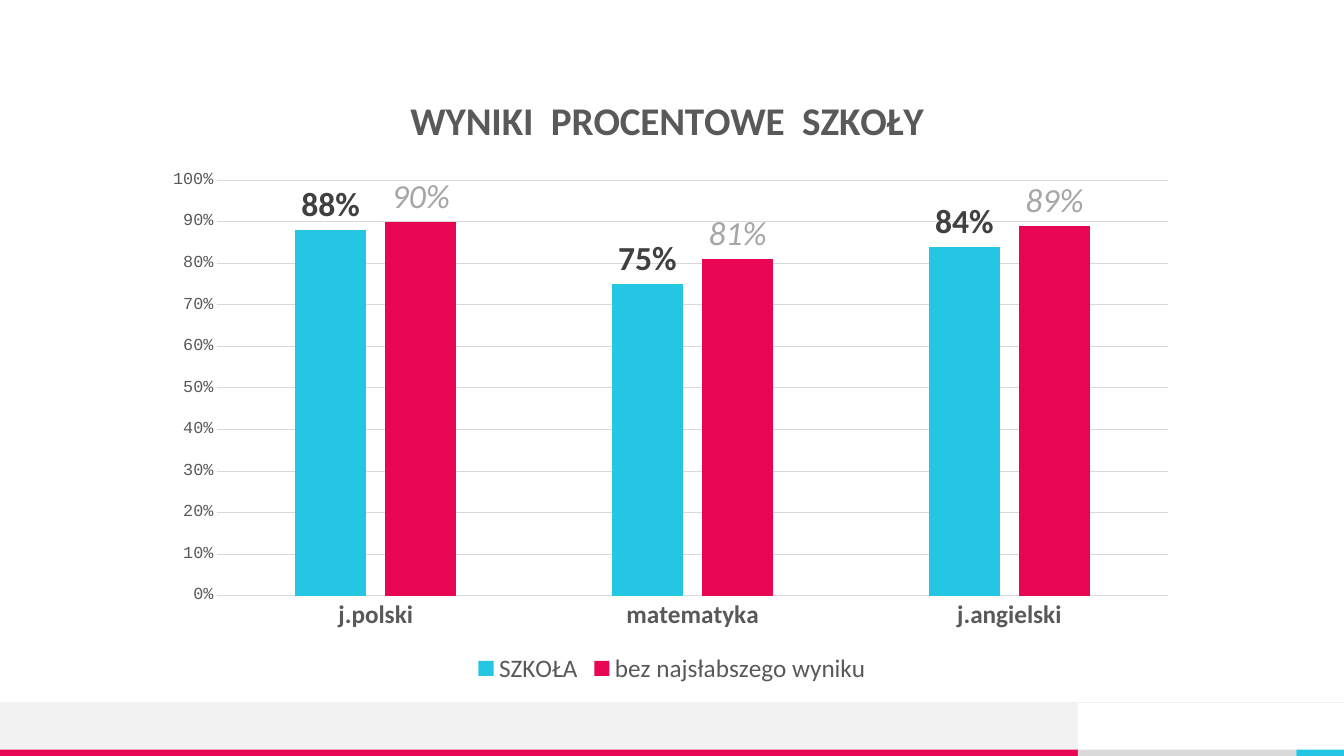
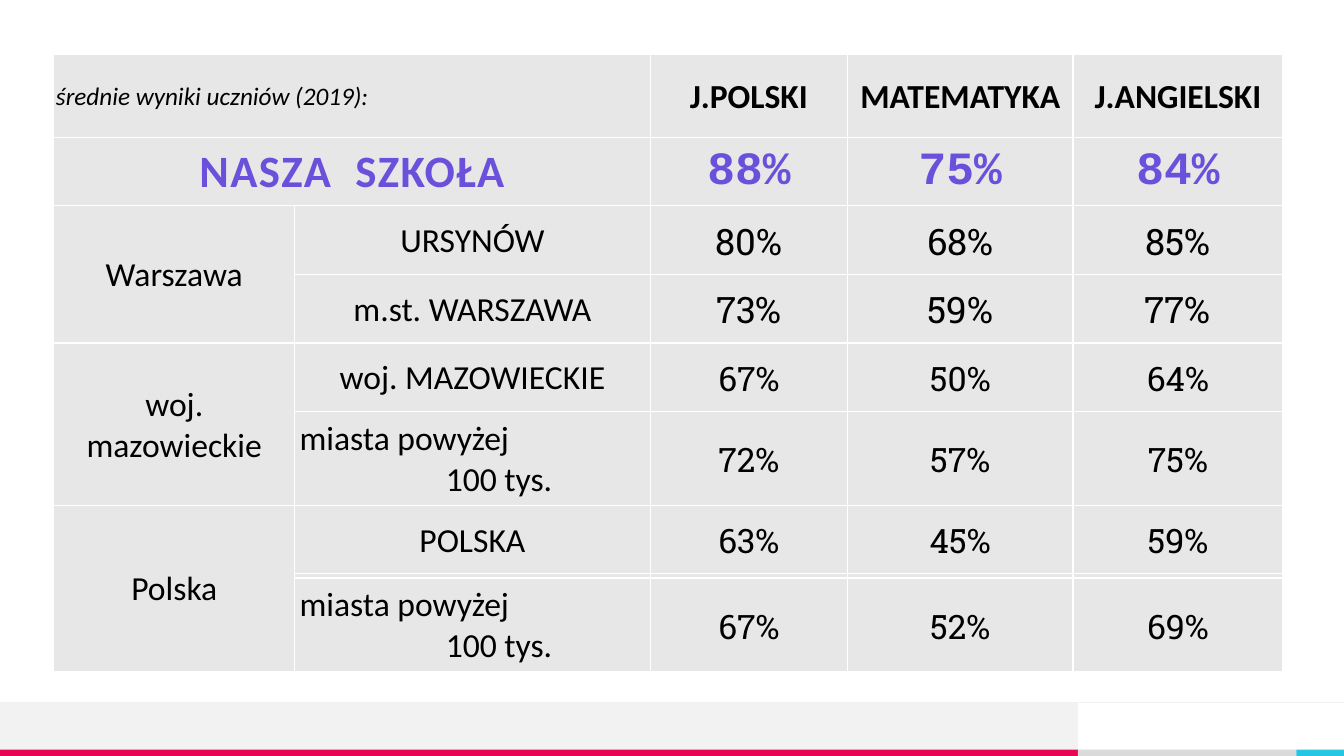
from lxml import etree
from pptx import Presentation
from pptx.chart.data import CategoryChartData
from pptx.dml.color import RGBColor
from pptx.enum.chart import XL_CHART_TYPE, XL_LABEL_POSITION, XL_LEGEND_POSITION, XL_TICK_MARK
from pptx.enum.shapes import MSO_CONNECTOR, MSO_SHAPE
from pptx.enum.text import MSO_ANCHOR, PP_ALIGN
from pptx.oxml import parse_xml
from pptx.oxml.ns import nsdecls, qn
from pptx.util import Pt

WIDTH, HEIGHT = 960, 540
BAND_TOP, STRIPE_TOP = 502, 535.5
STRIPE_ENDS = [0, 770, 926, WIDTH]

CYAN, CRIMSON, VIOLET = "25C6E3", "E80554", "6A50DB"
BLACK, WHITE = "000000", "FFFFFF"
DARK, GREY, PALE_TEXT = "404040", "595959", "A6A6A6"
GRID, STRIPE, BAND, CELL = "D9D9D9", "DADADA", "F2F2F2", "E7E7E7"
SANS, MONO, SLAB = "Calibri", "Courier New", "Roboto Slab"

SUBJECTS = ["j.polski", "matematyka", "j.angielski"]
CITIES = "miasta powyżej\n100 tys."
COLUMN_WIDTHS = [172, 254, 141, 161, 150]
ROW_HEIGHTS = [59, 49, 49, 49, 49, 67, 49, 3, 67]
SPACER_ROW = 7
MERGES = [((0, 0), (0, 1)), ((1, 0), (1, 1)), ((2, 0), (3, 0)), ((4, 0), (5, 0)), ((6, 0), (8, 0))]
ROWS = [
    ["średnie wyniki uczniów (2019):", "", *[subject.upper() for subject in SUBJECTS]],
    ["NASZA  SZKOŁA", "", "88%", "75%", "84%"],
    ["Warszawa", "URSYNÓW", "80%", "68%", "85%"],
    ["", "m.st. WARSZAWA", "73%", "59%", "77%"],
    ["woj. mazowieckie", "woj. MAZOWIECKIE", "67%", "50%", "64%"],
    ["", CITIES, "72%", "57%", "75%"],
    ["Polska", "POLSKA", "63%", "45%", "59%"],
    [""] * 5,
    ["", CITIES, "67%", "52%", "69%"],
]


def color(value):
    return RGBColor.from_string(value)


def style_font(font, size, fill, name=SANS, bold=False, italic=False):
    font.size, font.name, font.bold, font.italic = Pt(size), name, bold, italic
    font.color.rgb = color(fill)


def style_runs(paragraph, *style, spacing=0, **options):
    for run in paragraph.runs:
        style_font(run.font, *style, **options)
        if spacing:
            run.font._element.set("spc", str(round(spacing * 100)))


def add_bar(slide, left, top, width, height, fill):
    bar = slide.shapes.add_shape(MSO_SHAPE.RECTANGLE, Pt(left), Pt(top), Pt(width), Pt(height))
    bar.shadow.inherit = False
    bar.fill.solid()
    bar.fill.fore_color.rgb = color(fill)
    bar.line.fill.background()
    return bar


def add_rule(slide, top):
    rule = slide.shapes.add_connector(MSO_CONNECTOR.STRAIGHT, 0, Pt(top), Pt(WIDTH), Pt(top))
    rule.line.color.rgb = color(BAND)
    rule.line.width = Pt(0.5)
    etree.SubElement(rule.element.spPr, qn("a:effectLst"))
    return rule


def add_footer(slide):
    """Draw the footer and move it to the layout, where all slides share it."""
    parts = [add_bar(slide, 0, BAND_TOP, STRIPE_ENDS[1], STRIPE_TOP - BAND_TOP, BAND)]
    for left, right, fill in zip(STRIPE_ENDS, STRIPE_ENDS[1:], [CRIMSON, STRIPE, CYAN]):
        parts.append(add_bar(slide, left, STRIPE_TOP, right - left, HEIGHT - STRIPE_TOP, fill))
    parts.append(add_rule(slide, BAND_TOP))
    for part in parts:
        slide.slide_layout.shapes.element.append(part.element)


def place(chart_part, left, top, width=None, height=None):
    """Set a chart part's position as fractions of the chart."""
    target = "<c:layoutTarget val='inner'/>" if width else ""
    modes = "<c:xMode val='edge'/><c:yMode val='edge'/>"
    values = "".join(
        f"<c:{key} val='{value}'/>"
        for key, value in zip("xywh", [left, top, width, height]) if value)
    layout = parse_xml(
        f"<c:layout {nsdecls('c')}><c:manualLayout>{target}{modes}{values}"
        "</c:manualLayout></c:layout>")
    for old in chart_part.findall(qn("c:layout")):
        chart_part.remove(old)
    text = chart_part.find(qn("c:tx"))
    chart_part.insert(0 if text is None else 1, layout)


def style_axes(chart):
    categories, values = chart.category_axis, chart.value_axis
    for axis in (categories, values):
        axis.major_tick_mark = axis.minor_tick_mark = XL_TICK_MARK.NONE
    style_font(categories.tick_labels.font, 18, GREY, bold=True)
    style_font(values.tick_labels.font, 12, GREY, MONO)
    values.minimum_scale, values.maximum_scale, values.major_unit = 0, 1, 0.1
    values.tick_labels.number_format = "0%"
    values.tick_labels.number_format_is_linked = False
    values.format.line.fill.background()
    for line in (categories.format.line, values.major_gridlines.format.line):
        line.color.rgb = color(GRID)
        line.width = Pt(0.75)


def style_series(series, fill, label_color, **label_options):
    series.format.fill.solid()
    series.format.fill.fore_color.rgb = color(fill)
    labels = series.data_labels
    labels.show_value = True
    labels.number_format, labels.number_format_is_linked = "0%", False
    labels.position = XL_LABEL_POSITION.OUTSIDE_END
    style_font(labels.font, 24, label_color, **label_options)


def add_results_chart(slide):
    data = CategoryChartData(number_format="0%")
    data.categories = SUBJECTS
    data.add_series("SZKOŁA", [0.88, 0.75, 0.84])
    data.add_series("bez najsłabszego wyniku", [0.9, 0.81, 0.89])
    chart = slide.shapes.add_chart(
        XL_CHART_TYPE.COLUMN_CLUSTERED, Pt(111), Pt(49), Pt(738), Pt(443), data).chart
    style_font(chart.font, 10, BLACK)

    title = chart.chart_title
    title.text_frame.text = "WYNIKI  PROCENTOWE  SZKOŁY"
    style_runs(title.text_frame.paragraphs[0], 28, GREY, bold=True)
    title.include_in_layout = False
    place(title._element, 0.24, 0.03)

    chart.has_legend = True
    chart.legend.position = XL_LEGEND_POSITION.BOTTOM
    chart.legend.include_in_layout = False
    style_font(chart.legend.font, 18, GREY)

    plot = chart.plots[0]
    plot.gap_width, plot.overlap, plot.vary_by_categories = 219, -27, False
    place(chart._chartSpace.chart.plotArea, 0.06, 0.18, 0.92, 0.67)
    style_axes(chart)
    school, without_weakest = plot.series
    style_series(school, CYAN, DARK, bold=True)
    style_series(without_weakest, CRIMSON, PALE_TEXT, italic=True)


def style_cell(cell):
    cell.fill.solid()
    cell.fill.fore_color.rgb = color(CELL)
    cell.vertical_anchor = MSO_ANCHOR.MIDDLE
    cell.margin_left = cell.margin_right = cell.margin_top = Pt(1.5)
    cell.margin_bottom = 0
    properties = cell._tc.get_or_add_tcPr()
    for index, side in enumerate("LRTB"):
        properties.insert(index, parse_xml(
            f"<a:ln{side} {nsdecls('a')} w='{Pt(1)}'><a:solidFill>"
            f"<a:srgbClr val='{WHITE}'/></a:solidFill></a:ln{side}>"))


def shrink_empty_cell(cell):
    cell.margin_top = 0
    end = etree.SubElement(cell.text_frame.paragraphs[0]._p, qn("a:endParaRPr"))
    end.set("sz", "100")


def text_style(row, column):
    """Return the font settings for a table position."""
    is_value = column >= 2
    if row == 0:
        return dict(size=24 if is_value else 18, fill=BLACK, bold=is_value, italic=not is_value)
    if row == 1:
        if is_value:
            return dict(size=33, fill=VIOLET, name=MONO, bold=True)
        return dict(size=32, fill=VIOLET, bold=True, spacing=1)
    size = 26 if is_value and row < 4 else 24
    return dict(size=size, fill=BLACK, name=SLAB if is_value else SANS)


def fill_cell(cell, text, row, column):
    cell.text_frame.text = text
    for paragraph in cell.text_frame.paragraphs:
        paragraph.alignment = PP_ALIGN.LEFT if (row, column) == (0, 0) else PP_ALIGN.CENTER
        style_runs(paragraph, **text_style(row, column))
    if text == CITIES:
        first, second = cell.text_frame.paragraphs
        first.alignment = PP_ALIGN.LEFT
        for paragraph, indent in ((first, 2), (second, 38)):
            paragraph._p.get_or_add_pPr().set("marL", str(Pt(indent)))


def add_comparison_table(slide):
    table = slide.shapes.add_table(
        len(ROWS), len(COLUMN_WIDTHS), Pt(38.5), Pt(39),
        Pt(sum(COLUMN_WIDTHS)), Pt(sum(ROW_HEIGHTS))).table
    table.first_row = table.horz_banding = False
    for column, width in zip(table.columns, COLUMN_WIDTHS):
        column.width = Pt(width)
    for row, height in zip(table.rows, ROW_HEIGHTS):
        row.height = Pt(height)
    for row, texts in enumerate(ROWS):
        for column, text in enumerate(texts):
            cell = table.cell(row, column)
            style_cell(cell)
            if text:
                fill_cell(cell, text, row, column)
            elif row == SPACER_ROW:
                shrink_empty_cell(cell)
    for first, last in MERGES:
        table.cell(*first).merge(table.cell(*last))


def main():
    presentation = Presentation()
    presentation.slide_width, presentation.slide_height = Pt(WIDTH), Pt(HEIGHT)
    blank = presentation.slide_layouts[6]
    chart_slide, table_slide = [presentation.slides.add_slide(blank) for _ in range(2)]
    add_footer(chart_slide)
    add_results_chart(chart_slide)
    add_comparison_table(table_slide)
    presentation.save("out.pptx")


if __name__ == "__main__":
    main()
